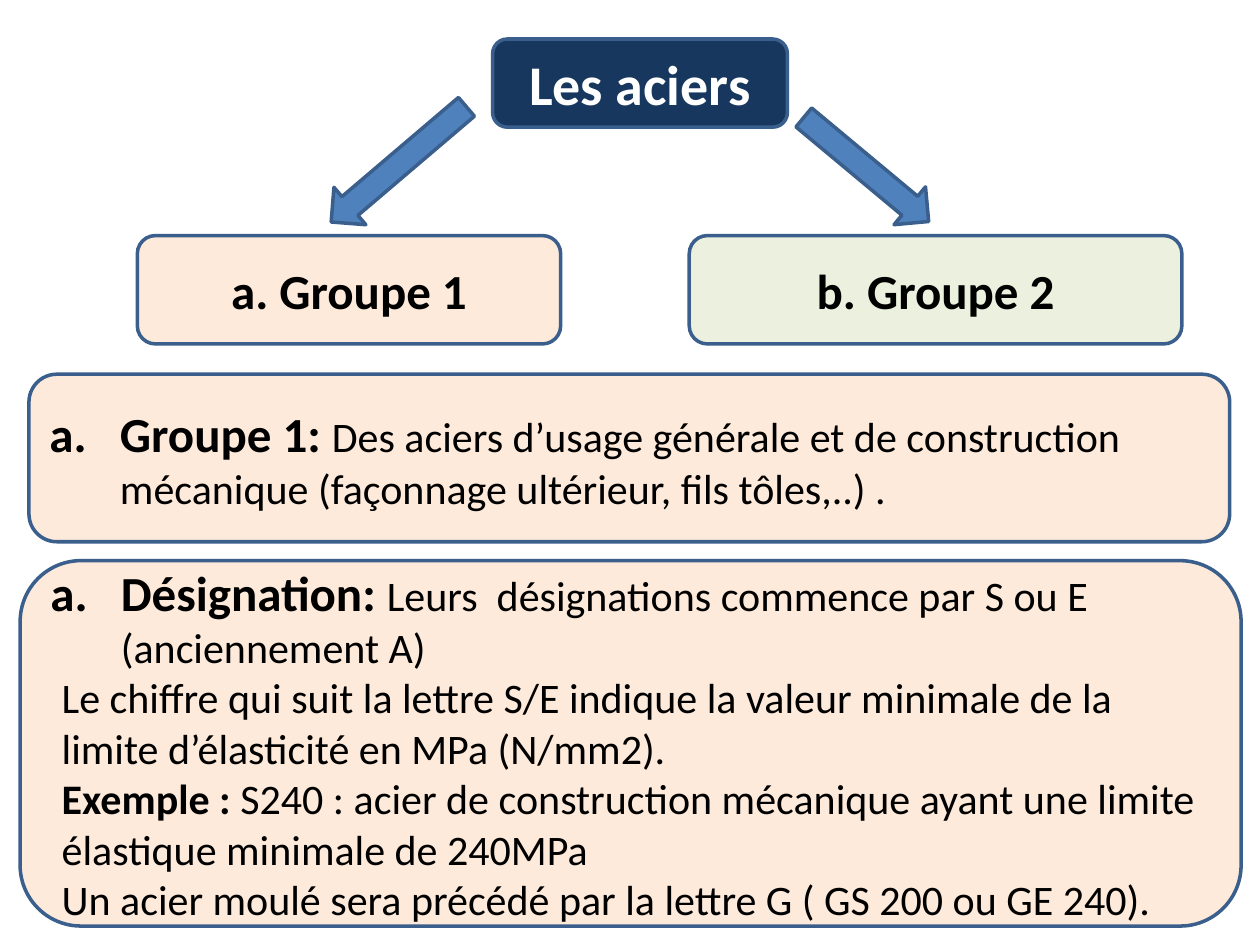
from dataclasses import dataclass

from lxml.etree import SubElement
from pptx import Presentation
from pptx.dml.color import RGBColor as RGB
from pptx.enum.shapes import MSO_SHAPE as Kind
from pptx.enum.text import MSO_ANCHOR as Anchor, PP_ALIGN as Align
from pptx.oxml.ns import qn
from pptx.shapes.autoshape import Shape
from pptx.slide import Slide
from pptx.util import Inches, Pt


@dataclass(frozen=True)
class Theme:
    font: str = "Calibri"
    navy: str = "17375E"
    peach: str = "FDEADA"
    green: str = "EBF1DE"
    blue: str = "4F81BD"
    edge: str = "3A5F8C"
    white: str = "FFFFFF"
    black: str = "000000"
    title: int = 32
    head: int = 28
    body: int = 24
    line: int = 2


THEME = Theme()


@dataclass(frozen=True)
class Run:
    text: str
    size: int = THEME.body
    bold: bool = False
    color: str = THEME.black
    ends: bool = False  # a line break follows


@dataclass(frozen=True)
class Para:
    runs: tuple[Run, ...]
    align: Align = Align.LEFT
    left: float = 0
    letter: bool = False


@dataclass(frozen=True)
class Box:
    left: float
    top: float
    width: float
    height: float
    fill: str
    paras: tuple[Para, ...]


@dataclass(frozen=True)
class Arrow:
    left: float
    top: float
    width: float
    turn: float
    height: float = 0.39


def label(text: str, size: int = THEME.head, color: str = THEME.black) -> tuple[Para, ...]:
    return (Para((Run(text, size, True, color),), Align.CENTER),)


def item(head: str, text: str) -> Para:
    """Lettered paragraph with a bold lead and a hanging indent."""
    return Para((Run(head, THEME.head, True), Run(text)), left=0.56, letter=True)


BOXES = (
    Box(3.91, 0.31, 2.34, 0.7, THEME.navy, label("Les aciers", THEME.title, THEME.white)),
    Box(1.09, 1.87, 3.36, 0.86, THEME.peach, label("a. Groupe 1")),
    Box(5.47, 1.87, 3.91, 0.86, THEME.green, label("b. Groupe 2")),
    Box(0.23, 2.97, 9.53, 1.33, THEME.peach, (
        item("Groupe 1: ", "Des aciers d’usage générale et de construction "
             "mécanique (façonnage ultérieur, fils tôles,..) ."),
    )),
    Box(0.16, 4.45, 9.69, 2.9, THEME.peach, (
        item("Désignation: ", "Leurs  désignations commence par S ou E (anciennement A)"),
        Para((
            Run("Le chiffre qui suit la lettre S/E indique la valeur minimale "
                "de la limite d’élasticité en MPa (N/mm2). ", ends=True),
            Run("Exemple : ", bold=True),
            Run("S240 : acier de construction mécanique ayant une limite "
                "élastique minimale de 240MPa ", ends=True),
            Run("Un acier moulé sera précédé par la lettre G ( GS 200 ou GE 240)."),
        ), left=0.09),
    )),
)
ARROWS = (Arrow(2.46, 1.11, 1.41, 139.6), Arrow(6.23, 1.15, 1.29, 39.8))


def add_form(slide: Slide, kind: Kind, part: Box | Arrow, fill: str) -> Shape:
    shape = slide.shapes.add_shape(kind, Inches(part.left), Inches(part.top),
                                   Inches(part.width), Inches(part.height))
    shape.shadow.inherit = False
    shape.fill.solid()
    shape.fill.fore_color.rgb = RGB.from_string(fill)
    shape.line.color.rgb = RGB.from_string(THEME.edge)
    shape.line.width = Pt(THEME.line)
    return shape


def add_box(slide: Slide, box: Box) -> None:
    frame = add_form(slide, Kind.FLOWCHART_ALTERNATE_PROCESS, box, box.fill).text_frame
    frame.word_wrap = True
    frame.vertical_anchor = Anchor.MIDDLE
    for i, para in enumerate(box.paras):
        line = frame.add_paragraph() if i else frame.paragraphs[0]
        line.alignment = para.align
        props = line._p.get_or_add_pPr()
        props.set("marL", str(Inches(para.left)))
        props.set("indent", str(-Inches(para.left) if para.letter else 0))
        if para.letter:
            SubElement(props, qn("a:buFont"), typeface=THEME.font)
            SubElement(props, qn("a:buAutoNum"), type="alphaLcPeriod")
        for part in para.runs:
            run = line.add_run()
            run.text = part.text
            font = run.font
            font.name, font.size, font.bold = THEME.font, Pt(part.size), part.bold
            font.color.rgb = RGB.from_string(part.color)
            if part.ends:
                line.add_line_break()


def add_arrow(slide: Slide, arrow: Arrow) -> None:
    add_form(slide, Kind.RIGHT_ARROW, arrow, THEME.blue).rotation = arrow.turn


def main() -> None:
    deck = Presentation()
    deck.slide_width, deck.slide_height = Inches(10), Inches(7.5)
    slide = deck.slides.add_slide(deck.slide_layouts[6])
    for box in BOXES:
        add_box(slide, box)
    for arrow in ARROWS:
        add_arrow(slide, arrow)
    deck.save("out.pptx")


if __name__ == "__main__":
    main()
